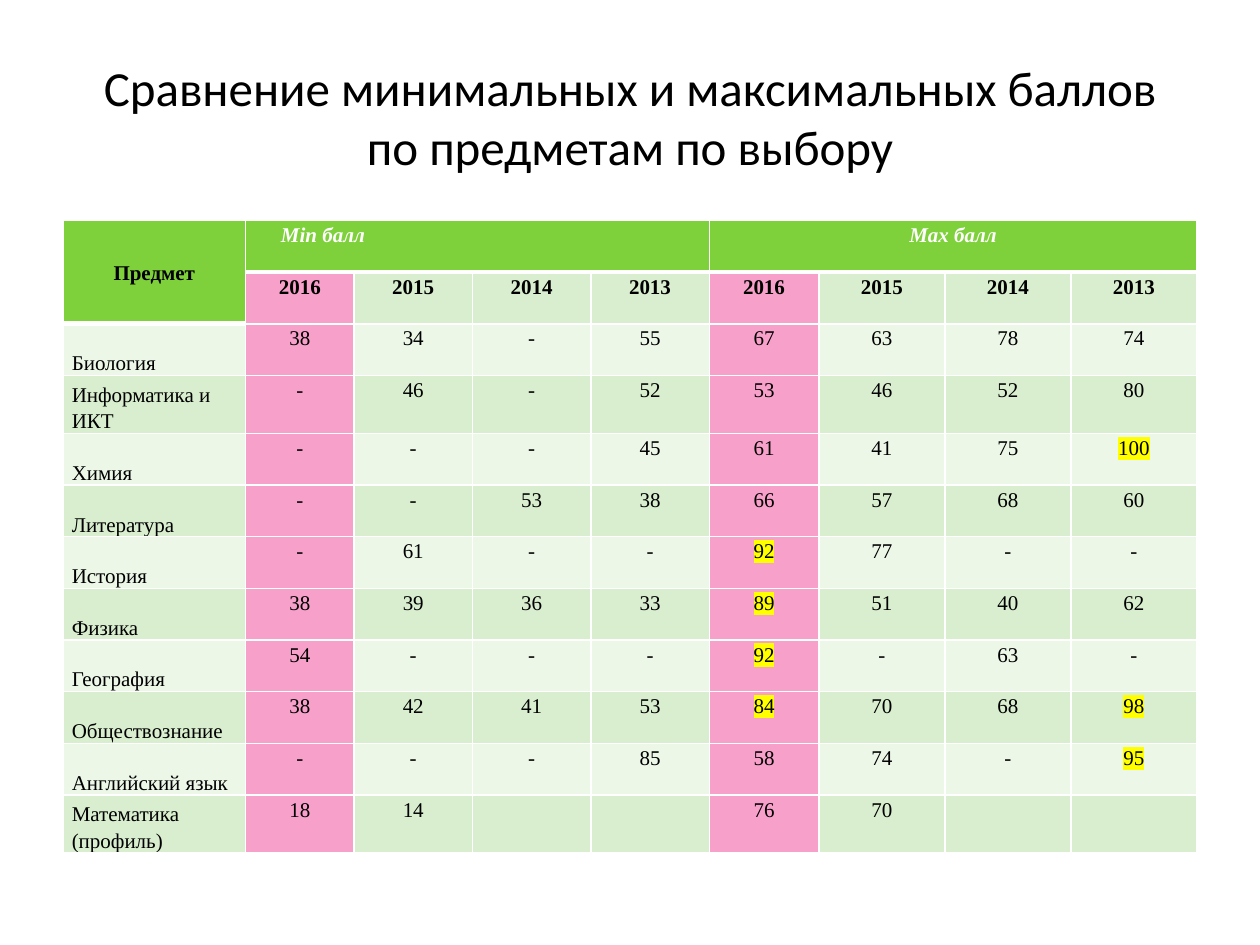
from typing import NamedTuple

from lxml import etree
from pptx import Presentation, util as u
from pptx.dml.color import RGBColor
from pptx.enum import text
from pptx.oxml.ns import qn

COLORS = {
    "ink": "000000", "white": "FFFFFF", "header": "7FD13B", "current_year": "F7A1CA",
    "light": "ECF7E8", "dark": "D8EECE", "highlight": "FFFF00",
}
YEARS = ("2016", "2015", "2014", "2013")
HIGH_SCORE = 84
COLUMN_WIDTHS = (1.45, 0.86, 0.94, 0.94, 0.94, 0.87, 1, 1, 1)
ROW_HEIGHT = 0.41
MIN_START, MAX_START = 1, 5
CENTER, LEFT = text.PP_ALIGN.CENTER, text.PP_ALIGN.LEFT
TOP, MIDDLE, BOTTOM = text.MSO_ANCHOR.TOP, text.MSO_ANCHOR.MIDDLE, text.MSO_ANCHOR.BOTTOM


class Subject(NamedTuple):
    name: str
    lowest: tuple[str, ...]
    highest: tuple[str, ...]


class Style(NamedTuple):
    align: text.PP_ALIGN = CENTER
    anchor: text.MSO_ANCHOR = TOP
    color: str = "ink"
    bold: bool = False
    italic: bool = False
    indent: float = 0.07


SUBJECTS = (
    Subject("Биология", ("38", "34", "-", "55"), ("67", "63", "78", "74")),
    Subject("Информатика и ИКТ", ("-", "46", "-", "52"), ("53", "46", "52", "80")),
    Subject("Химия", ("-", "-", "-", "45"), ("61", "41", "75", "100")),
    Subject("Литература", ("-", "-", "53", "38"), ("66", "57", "68", "60")),
    Subject("История", ("-", "61", "-", "-"), ("92", "77", "-", "-")),
    Subject("Физика", ("38", "39", "36", "33"), ("89", "51", "40", "62")),
    Subject("География", ("54", "-", "-", "-"), ("92", "-", "63", "-")),
    Subject("Обществознание", ("38", "42", "41", "53"), ("84", "70", "68", "98")),
    Subject("Английский язык", ("-", "-", "-", "85"), ("58", "74", "-", "95")),
    Subject("Математика (профиль)", ("18", "14", "", ""), ("76", "70", "", "")),
)

SCORE = Style()
YEAR = Style(bold=True)
SUBJECT_NAME = Style(align=LEFT, anchor=BOTTOM)
CORNER = Style(anchor=MIDDLE, bold=True)
MAX_HEADING = Style(color="white", bold=True, italic=True)
MIN_HEADING = MAX_HEADING._replace(align=LEFT, indent=0.28)


def rgb(name: str) -> RGBColor:
    return RGBColor.from_string(COLORS[name])


def add_run(paragraph, wording: str, font_name: str, size: float, color: str = "ink"):
    run = paragraph.add_run()
    run.text = wording
    run.font.name = font_name
    run.font.size = u.Pt(size)
    run.font.color.rgb = rgb(color)
    return run


def highlight(run) -> None:
    marker = etree.Element(qn("a:highlight"))
    etree.SubElement(marker, qn("a:srgbClr"), val=COLORS["highlight"])
    run.font._element.find(qn("a:solidFill")).addnext(marker)


def set_borders(cell, top: float, bottom: float) -> None:
    properties = cell._tc.get_or_add_tcPr()
    for side, points in (("L", 1), ("R", 1), ("T", top), ("B", bottom)):
        line = etree.SubElement(properties, qn(f"a:ln{side}"), w=str(u.Pt(points)))
        fill = etree.SubElement(line, qn("a:solidFill"))
        etree.SubElement(fill, qn("a:srgbClr"), val=COLORS["white"])


def write(cell, wording: str, style: Style, marked: bool = False) -> None:
    cell.margin_left = u.Inches(style.indent)
    cell.margin_right = u.Inches(0.07)
    cell.margin_top = cell.margin_bottom = 0
    cell.vertical_anchor = style.anchor
    paragraph = cell.text_frame.paragraphs[0]
    paragraph.alignment = style.align
    paragraph.line_spacing = 1.15
    if not wording:
        return
    run = add_run(paragraph, wording, "Times New Roman", 12, style.color)
    run.font.bold = style.bold
    run.font.italic = style.italic
    if marked:
        highlight(run)


def format_grid(table) -> None:
    """Fill and outline every cell, with a thick rule under the green header."""
    for row in range(len(table.rows)):
        for column in range(len(table.columns)):
            cell = table.cell(row, column)
            header_rows = 2 if column == 0 else 1
            set_borders(cell, top=3 if row == header_rows else 1,
                        bottom=3 if row == header_rows - 1 else 1)
            if row < header_rows:
                color = "header"
            elif column in (MIN_START, MAX_START):
                color = "current_year"
            else:
                color = "dark" if row % 2 else "light"
            cell.fill.solid()
            cell.fill.fore_color.rgb = rgb(color)


def add_title(slide, wording: str) -> None:
    title = slide.shapes.add_textbox(u.Inches(0.5), u.Inches(0.3), u.Inches(9), u.Inches(1.25))
    frame = title.text_frame
    frame.word_wrap = True
    frame.vertical_anchor = MIDDLE
    frame.paragraphs[0].alignment = CENTER
    add_run(frame.paragraphs[0], wording, "Calibri", 28)


def add_score_table(slide) -> None:
    row_count = len(SUBJECTS) + 2
    table = slide.shapes.add_table(
        row_count, len(COLUMN_WIDTHS), u.Inches(0.5), u.Inches(1.75),
        u.Inches(sum(COLUMN_WIDTHS)), u.Inches(ROW_HEIGHT * row_count)).table
    table.first_row = table.horz_banding = False
    for column, width in zip(table.columns, COLUMN_WIDTHS):
        column.width = u.Inches(width)
    for row in table.rows:
        row.height = u.Inches(ROW_HEIGHT)
    format_grid(table)

    table.cell(0, 0).merge(table.cell(1, 0))
    write(table.cell(0, 0), "Предмет", CORNER)
    for start, heading, style in ((MIN_START, "Min балл", MIN_HEADING),
                                  (MAX_START, "Max балл", MAX_HEADING)):
        table.cell(0, start).merge(table.cell(0, start + len(YEARS) - 1))
        write(table.cell(0, start), heading, style)
    for column, year in enumerate(YEARS * 2, MIN_START):
        write(table.cell(1, column), year, YEAR)

    for row, subject in enumerate(SUBJECTS, 2):
        write(table.cell(row, 0), subject.name, SUBJECT_NAME)
        for column, score in enumerate(subject.lowest + subject.highest, MIN_START):
            marked = column >= MAX_START and score.isdigit() and int(score) >= HIGH_SCORE
            write(table.cell(row, column), score, SCORE, marked)


def main() -> None:
    deck = Presentation()
    deck.slide_width, deck.slide_height = u.Inches(10), u.Inches(7.5)
    slide = deck.slides.add_slide(deck.slide_layouts[6])
    add_title(slide, "Сравнение минимальных и максимальных баллов по предметам по выбору")
    add_score_table(slide)
    deck.save("out.pptx")


if __name__ == "__main__":
    main()
